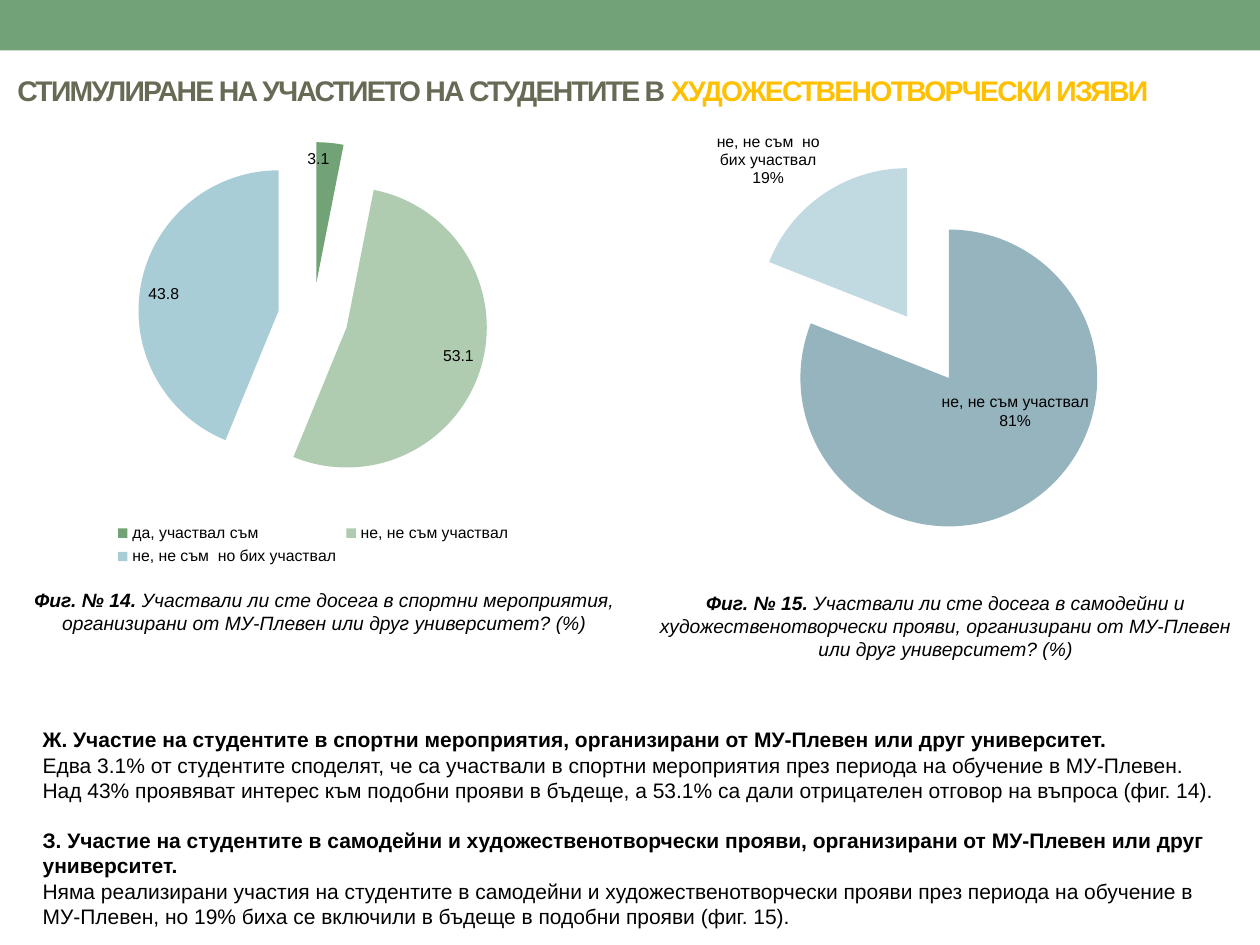
"""Build the slide on student participation in sports and artistic events."""
from lxml import etree
from pptx import Presentation
from pptx.chart.data import CategoryChartData
from pptx.dml.color import RGBColor
from pptx.enum.chart import XL_CHART_TYPE, XL_LABEL_POSITION, XL_LEGEND_POSITION
from pptx.enum.shapes import MSO_SHAPE
from pptx.enum.text import MSO_ANCHOR, PP_ALIGN
from pptx.oxml.ns import qn
from pptx.util import Inches, Pt

GREEN = RGBColor(0x72, 0xA3, 0x76)
PALE_GREEN = RGBColor(0xB0, 0xCC, 0xB0)
PALE_BLUE = RGBColor(0xA8, 0xCD, 0xD7)
STEEL_BLUE = RGBColor(0x95, 0xB4, 0xBE)
ICE_BLUE = RGBColor(0xC1, 0xD9, 0xE0)
OLIVE = RGBColor(0x67, 0x6A, 0x55)
GOLD = RGBColor(0xFF, 0xC0, 0x00)
BLACK = RGBColor(0, 0, 0)

deck = Presentation()
deck.slide_width, deck.slide_height = Inches(10), Inches(7.5)
slide = deck.slides.add_slide(deck.slide_layouts[6])


def style(font, color=BLACK, **values):
    for name, value in {"name": "Arial", **values}.items():
        setattr(font, name, value)
    font.color.rgb = color


def add_text(box, paragraphs, align=PP_ALIGN.LEFT, anchor=MSO_ANCHOR.TOP):
    frame = slide.shapes.add_textbox(*map(Inches, box)).text_frame
    frame.word_wrap, frame.vertical_anchor = True, anchor
    for number, runs in enumerate(paragraphs):
        paragraph = frame.add_paragraph() if number else frame.paragraphs[0]
        paragraph.alignment = align
        for words, values in runs:
            run = paragraph.add_run()
            run.text = words
            style(run.font, **values)
    return frame


band = slide.shapes.add_shape(MSO_SHAPE.RECTANGLE, 0, 0, Inches(10), Inches(0.4))
band.shadow.inherit = False
band.fill.solid()
band.fill.fore_color.rgb = GREEN
band.line.fill.background()

heading = {"size": Pt(16.2), "bold": True}
title = add_text(
    (0.04, 0.44, 9.69, 0.55),
    [[("СТИМУЛИРАНЕ НА УЧАСТИЕТО НА СТУДЕНТИТЕ В ", {**heading, "color": OLIVE}),
      ("ХУДОЖЕСТВЕНОТВОРЧЕСКИ ИЗЯВИ", {**heading, "color": GOLD})]],
    anchor=MSO_ANCHOR.MIDDLE,
)
for run in title.paragraphs[0].runs:
    run.font._element.set("spc", "-100") if hasattr(run.font, "_element") else run._r.get_or_add_rPr().set("spc", "-100")

lead = {"size": Pt(12), "bold": True}
body = {"size": Pt(12), "bold": False}
findings = add_text((0.24, 5.72, 9.57, 1.72), [
    [("Ж. Участие на студентите в спортни мероприятия, организирани от МУ-Плевен или друг университет.", lead)],
    [("Едва 3.1% от студентите споделят, че са участвали в спортни мероприятия през периода на обучение "
      "в МУ-Плевен. Над 43% проявяват интерес към подобни прояви в бъдеще, а 53.1% са дали отрицателен "
      "отговор на въпроса (фиг. 14).", body)],
    [("З. Участие на студентите в самодейни и художественотворчески прояви, организирани от МУ-Плевен "
      "или друг университет.", lead)],
    [("Няма реализирани участия на студентите в самодейни и художественотворчески прояви през периода "
      "на обучение в МУ-Плевен, но 19% биха се включили в бъдеще в подобни прояви (фиг. 15).", body)],
])
findings.paragraphs[2].space_before = Pt(14.4)

caption = {"size": Pt(11), "italic": True}
for box, figure, question in [
    ((0.11, 4.62, 4.93, 0.47), "Фиг. № 14. ",
     "Участвали ли сте досега в спортни мероприятия, организирани от МУ-Плевен или друг университет? (%)"),
    ((5.04, 4.64, 4.93, 0.66), "Фиг. № 15. ",
     "Участвали ли сте досега в самодейни и художественотворчески прояви, организирани от МУ-Плевен "
     "или друг университет? (%)"),
]:
    add_text(box, [[(figure, {**caption, "bold": True}), (question, {**caption, "bold": False})]],
             align=PP_ALIGN.CENTER)

answers = ["да, участвал съм", "не, не съм участвал", "не, не съм  но бих участвал"]
value_labels = {"show_value": True, "number_format": "General", "position": XL_LABEL_POSITION.INSIDE_END}
share_labels = {"show_value": False, "show_percentage": True, "show_category_name": True,
                "number_format": "0%", "position": XL_LABEL_POSITION.BEST_FIT}
for box, categories, shares, colors, label_values, has_legend, plot_area in [
    ((0.2, 0.99, 4.57, 3.54), answers, (3.1, 53.1, 43.8),
     (GREEN, PALE_GREEN, PALE_BLUE), value_labels, True, None),
    ((4.92, 0.92, 4.94, 3.31), answers[1:], (81, 19),
     (STEEL_BLUE, ICE_BLUE), share_labels, False, (0.03, 0.11, 0.93, 0.89)),
]:
    survey = CategoryChartData()
    survey.categories = categories
    survey.add_series("Series 1", shares)
    chart = slide.shapes.add_chart(XL_CHART_TYPE.PIE, *map(Inches, box), survey).chart
    style(chart.font, size=Pt(18))
    chart.has_title = False
    chart.has_legend = has_legend
    if has_legend:
        chart.legend.position = XL_LEGEND_POSITION.BOTTOM
        chart.legend.include_in_layout = False
        style(chart.legend.font, size=Pt(9))
    pie = chart.plots[0]
    pie.vary_by_categories = True
    answers_series = pie.series[0]
    for index, color in enumerate(colors):
        wedge = answers_series.points[index].format
        wedge.fill.solid()
        wedge.fill.fore_color.rgb = color
        wedge.line.fill.background()
    explosion = etree.Element(qn("c:explosion"), val="25")
    answers_series._element.find(qn("c:dPt")).addprevious(explosion)
    labels = answers_series.data_labels
    for name, value in {**label_values, "number_format_is_linked": False}.items():
        setattr(labels, name, value)
    style(labels.font, size=Pt(9))
    if plot_area:
        area = chart._chartSpace.chart.plotArea
        for old_layout in area.findall(qn("c:layout")):
            area.remove(old_layout)
        layout = etree.Element(qn("c:layout"))
        area.insert(0, layout)
        manual = etree.SubElement(layout, qn("c:manualLayout"))
        settings = dict(layoutTarget="inner", xMode="edge", yMode="edge",
                        **dict(zip("xywh", map(str, plot_area))))
        for name, value in settings.items():
            etree.SubElement(manual, qn(f"c:{name}"), val=value)

deck.save("out.pptx")
